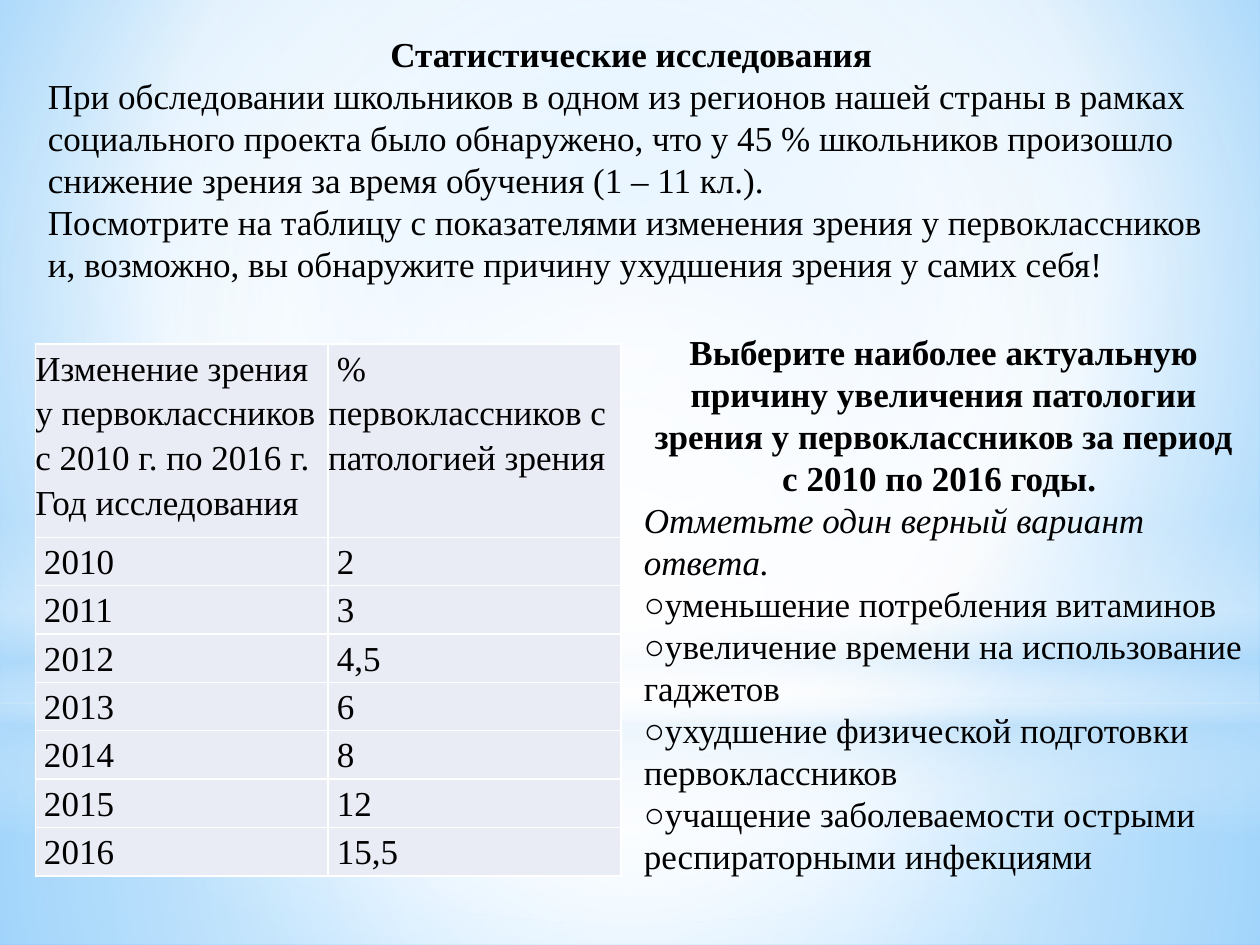
from pptx import Presentation
from pptx.dml.color import RGBColor
from pptx.enum.shapes import MSO_SHAPE
from pptx.enum.text import MSO_ANCHOR, MSO_AUTO_SIZE, PP_ALIGN
from pptx.oxml import parse_xml
from pptx.oxml.ns import nsdecls, qn
from pptx.util import Inches, Pt

RECTANGLE, OVAL = MSO_SHAPE.RECTANGLE, MSO_SHAPE.OVAL
LEFT, CENTER = PP_ALIGN.LEFT, PP_ALIGN.CENTER
TOP = MSO_ANCHOR.TOP
GROW = MSO_AUTO_SIZE.SHAPE_TO_FIT_TEXT

BLACK = RGBColor(0x00, 0x00, 0x00)
WHITE = RGBColor(0xFF, 0xFF, 0xFF)
SKY = RGBColor(0x9E, 0xD5, 0xFF)
DEEP_SKY = RGBColor(0x5B, 0xB9, 0xFF)
PALE_BLUE = RGBColor(0xB4, 0xDC, 0xFA)
CELL_FILL = RGBColor(0xE9, 0xEB, 0xF5)

WIDTH, HEIGHT = Inches(10), Inches(7.5)
FONT, SIZE = "Times New Roman", Pt(20)
HEADER_HEIGHT, ROW_HEIGHT = Inches(1.53), Inches(0.384)

INTRO = [
    ("Статистические исследования ", "bold"),
    ("При обследовании школьников в одном из регионов нашей страны в рамках "
     "социального проекта было обнаружено, что у 45 % школьников произошло "
     "снижение зрения за время обучения (1 – 11 кл.).", ""),
    ("Посмотрите на таблицу с показателями изменения зрения у первоклассников "
     "и, возможно, вы обнаружите причину ухудшения зрения у самих себя!", ""),
]
QUESTION = [
    ("Выберите наиболее актуальную причину увеличения патологии зрения "
     "у первоклассников за период с 2010 по 2016 годы. ", "bold"),
    ("Отметьте один верный вариант ответа.", "italic"),
    ("○уменьшение потребления витаминов", ""),
    ("○увеличение времени на использование гаджетов", ""),
    ("○ухудшение физической подготовки первоклассников", ""),
    ("○учащение заболеваемости острыми респираторными инфекциями", ""),
]
RECORDS = [
    ("Изменение зрения у первоклассников с 2010 г. по 2016 г. Год исследования",
     " % первоклассников с патологией зрения"),
    (" 2010", " 2"), (" 2011", " 3"), (" 2012", " 4,5"), (" 2013", " 6"),
    (" 2014", " 8"), (" 2015", " 12"), (" 2016", " 15,5"),
]
LINEAR = '<a:lin ang="5400000" scaled="0"/>'


def circle(left, top, right, bottom):
    """Return the circular gradient path with its focus given in percent."""
    return (f'<a:path path="circle"><a:fillToRect l="{left}000" t="{top}000" '
            f'r="{right}000" b="{bottom}000"/></a:path>')


def paint_gradient(owner, fill, stops, direction):
    """Fill with stops of (position, colour, opacity), all in percent."""
    fill.gradient()
    marks = "".join(
        f'<a:gs pos="{position}000"><a:srgbClr val="{colour}">'
        f'<a:alpha val="{opacity}000"/></a:srgbClr></a:gs>'
        for position, colour, opacity in stops)
    old = owner.element.find(".//" + qn("a:gradFill"))
    old.getparent().replace(old, parse_xml(
        f'<a:gradFill {nsdecls("a")} rotWithShape="1">'
        f'<a:gsLst>{marks}</a:gsLst>{direction}</a:gradFill>'))


def add_glow(page, layer, kind, top, height, stops, direction):
    """Add a full-width soft light behind the content, at shares of the height."""
    shape = page.shapes.add_shape(
        kind, 0, int(HEIGHT * top), WIDTH, int(HEIGHT * height))
    shape.shadow.inherit = False
    shape.line.fill.background()
    paint_gradient(shape, shape.fill, stops, direction)
    shape.element.getparent().insert(2 + layer, shape.element)


def style_paragraph(para, style=""):
    """Set the common face, size and colour, with an optional emphasis."""
    font = para.font
    font.name, font.size, font.color.rgb = FONT, SIZE, BLACK
    font.bold, font.italic = style == "bold", style == "italic"


def fill_placeholder(box, left, top, width, height, lines):
    """Move a placeholder to shares of the slide and write styled lines in it."""
    box.left, box.top = int(WIDTH * left), int(HEIGHT * top)
    box.width, box.height = int(WIDTH * width), int(HEIGHT * height)
    frame = box.text_frame
    frame.text = "\n".join(text for text, style in lines)
    frame.word_wrap, frame.auto_size, frame.vertical_anchor = True, GROW, TOP
    for para, (text, style) in zip(frame.paragraphs, lines):
        para.alignment = CENTER if style == "bold" else LEFT
        para.space_before = Pt(0)
        properties = para._p.get_or_add_pPr()
        properties.set("marL", "0")
        properties.set("indent", "0")
        properties.append(parse_xml(f'<a:buNone {nsdecls("a")}/>'))
        style_paragraph(para, style)


def format_cell(cell, text):
    """Write one table cell with no margins and white borders."""
    cell.text = text
    cell.margin_left = cell.margin_right = 0
    cell.margin_top = cell.margin_bottom = 0
    cell.fill.solid()
    cell.fill.fore_color.rgb = CELL_FILL
    para = cell.text_frame.paragraphs[0]
    para.line_spacing = 1.15
    style_paragraph(para)
    for index, side in enumerate("LRTB"):
        cell._tc.tcPr.insert(index, parse_xml(
            f'<a:ln{side} {nsdecls("a")} w="12700"><a:solidFill>'
            f'<a:srgbClr val="{WHITE}"/></a:solidFill></a:ln{side}>'))


def add_records(page):
    """Add the table of eyesight records by year."""
    height = HEADER_HEIGHT + ROW_HEIGHT * (len(RECORDS) - 1)
    table = page.shapes.add_table(
        len(RECORDS), 2, Inches(0.28), Inches(2.73), Inches(4.65), height).table
    for index, record in enumerate(RECORDS):
        table.rows[index].height = ROW_HEIGHT if index else HEADER_HEIGHT
        for column, text in enumerate(record):
            format_cell(table.cell(index, column), text)


def main():
    """Build and save the slide."""
    deck = Presentation()
    deck.slide_width, deck.slide_height = WIDTH, HEIGHT
    page = deck.slides.add_slide(deck.slide_layouts[1])
    paint_gradient(page, page.background.fill,
                   [(0, SKY, 100), (60, WHITE, 100), (100, DEEP_SKY, 100)],
                   circle(20, 10, 20, 60))
    middle = circle(50, 50, 50, 50)
    glows = [
        (RECTANGLE, 0.744, 0.256,
         [(0, WHITE, 91), (37, WHITE, 76), (100, PALE_BLUE, 79)], middle),
        (RECTANGLE, 0, 0.744,
         [(0, WHITE, 89), (48, WHITE, 62), (100, PALE_BLUE, 79)], middle),
        (RECTANGLE, 0.55, 0.333,
         [(0, WHITE, 0), (29, WHITE, 30), (45, PALE_BLUE, 40),
          (55, WHITE, 26), (65, PALE_BLUE, 60), (100, WHITE, 0)], LINEAR),
        (OVAL, 0.233, 0.744, [(0, WHITE, 100), (56, WHITE, 0)], middle),
    ]
    for layer, glow in enumerate(glows):
        add_glow(page, layer, *glow)
    title, body = page.placeholders
    fill_placeholder(title, 0.028, 0.028, 0.953, 0.283, INTRO)
    add_records(page)
    fill_placeholder(body, 0.501, 0.343, 0.496, 0.637, QUESTION)
    deck.save("out.pptx")


if __name__ == "__main__":
    main()
